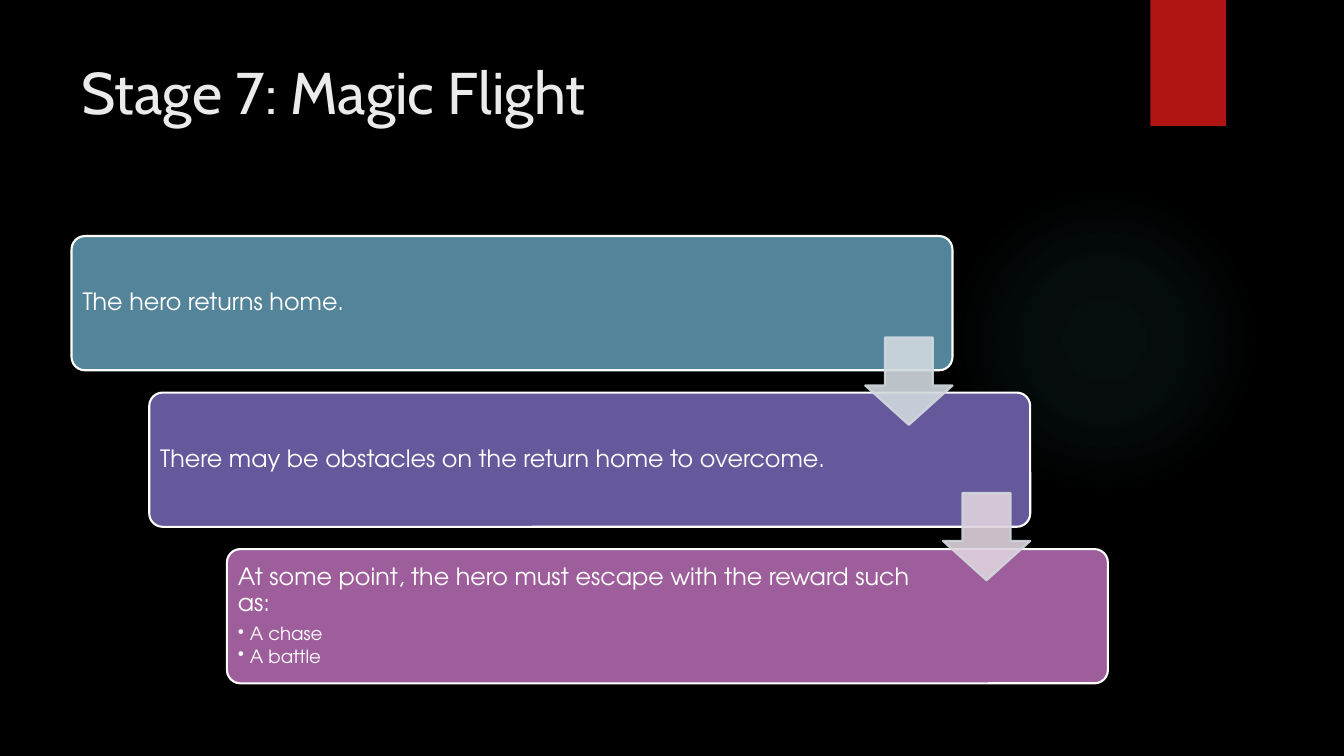
from lxml import etree
from pptx import Presentation
from pptx.dml.color import RGBColor
from pptx.enum.shapes import MSO_SHAPE as Geo
from pptx.enum.text import MSO_ANCHOR as Anchor
from pptx.oxml import parse_xml
from pptx.oxml.ns import nsdecls, qn
from pptx.util import Pt

# Content: fill, text width, lines as (text, is bullet)
TITLE = "Stage 7: Magic Flight"
TEAL = RGBColor(0x54, 0x84, 0x9A)
VIOLET = RGBColor(0x65, 0x59, 0x9C)
PLUM = RGBColor(0x9E, 0x5E, 0x9B)
STEPS = [
    (TEAL, 526.3, [("The hero returns home.", False)]),
    (VIOLET, 506.2,
     [("There may be obstacles on the return home to overcome.", False)]),
    (PLUM, 506.2,
     [("At some point, the hero must escape with the reward such as:", False),
      ("A chase", True), ("A battle", True)]),
]

# Colours and fonts
BLACK = RGBColor(0, 0, 0)
WHITE = RGBColor(255, 255, 255)
PALE = RGBColor(0xEB, 0xEB, 0xEB)
RED = RGBColor(0xB0, 0x15, 0x13)
GLOW = RGBColor(0x50, 0xB9, 0xC1)
MIST = RGBColor(0xD1, 0xD9, 0xDE)
ROSE = RGBColor(0xDF, 0xD2, 0xDE)
ARROWS = [MIST, ROSE]
HEAD, BODY = "Cabin", "TeX Gyre Adventor"

# Layout in points
LEFT, TOP, WIDE, HIGH = 51.1, 168.6, 629.3, 95.9
STEP_X, STEP_Y = 55.5, 111.8
PAD, INSET, ARROW = 2.8, 5.04, 62.4
ARROW_Y = 241.1

deck = Presentation()
deck.slide_width, deck.slide_height = Pt(960), Pt(540)
slide = deck.slides.add_slide(deck.slide_layouts[6])
slide.background.fill.solid()
slide.background.fill.fore_color.rgb = BLACK


def add_geo(kind, x, y, w, h, fill, line=None, adj=()):
    shape = slide.shapes.add_shape(kind, Pt(x), Pt(y), Pt(w), Pt(h))
    shape.shadow.inherit = False
    shape.fill.solid()
    shape.fill.fore_color.rgb = fill
    if line is None:
        shape.line.fill.background()
    else:
        shape.line.color.rgb = line
        shape.line.width = Pt(1.5)
    for i, value in enumerate(adj):
        shape.adjustments[i] = value
    return shape


def fade(shape, percent):
    for color in shape._element.spPr.iter(qn("a:srgbClr")):
        etree.SubElement(color, qn("a:alpha"), val=str(percent * 1000))


def add_bullet(para):
    props = para._p.get_or_add_pPr()
    props.set("marL", str(Pt(8.64)))
    props.set("indent", str(-Pt(8.64)))
    etree.SubElement(props, qn("a:buChar"), char="•")


def add_text(lines, x, y, w, h, *, font, color, size, small=13,
             inset=(7.2, 3.6), anchor=Anchor.TOP, space=None, after=0):
    frame = slide.shapes.add_textbox(Pt(x), Pt(y), Pt(w), Pt(h)).text_frame
    frame.word_wrap = True
    frame.vertical_anchor = anchor
    frame.margin_left = frame.margin_right = Pt(inset[0])
    frame.margin_top = frame.margin_bottom = Pt(inset[1])
    for i, (text, bullet) in enumerate(lines):
        para = frame.add_paragraph() if i else frame.paragraphs[0]
        if bullet:
            add_bullet(para)
        para.line_spacing = space
        para.space_after = Pt(2 if bullet else after)
        run = para.add_run()
        run.text = text
        run.font.name = font
        run.font.size = Pt(small if bullet else size)
        run.font.color.rgb = color


# Backdrop: soft glow and red tab
glow = add_geo(Geo.OVAL, 677.5, 131.8, 221.8, 221.8, GLOW)
stops = "".join(
    f'<a:gs pos="{pos * 1000}"><a:srgbClr val="{GLOW}">'
    f'<a:alpha val="{alpha * 1000}"/></a:srgbClr></a:gs>'
    for pos, alpha in [(0, 7), (36, 6), (69, 0), (100, 0)])
solid = glow._element.spPr.find(qn("a:solidFill"))
solid.getparent().replace(solid, parse_xml(
    f'<a:gradFill {nsdecls("a")}><a:gsLst>{stops}</a:gsLst>'
    '<a:path path="circle"><a:fillToRect l="50000" t="50000" '
    'r="50000" b="50000"/></a:path></a:gradFill>'))
add_geo(Geo.RECTANGLE, 821.8, 0, 54, 90, RED)

# Title
add_text([(TITLE, False)], 51.1, 36, 740.9, 110.2,
         font=HEAD, color=PALE, size=42)

# Staircase of steps
for i, (fill, width, lines) in enumerate(STEPS):
    x, y = LEFT + i * STEP_X, TOP + i * STEP_Y
    add_geo(Geo.ROUNDED_RECTANGLE, x, y, WIDE, HIGH, fill, WHITE, [0.1])
    add_text(lines, x + PAD, y + PAD, width, HIGH - 2 * PAD,
             font=BODY, color=WHITE, size=17, inset=(INSET, INSET),
             anchor=Anchor.MIDDLE, space=0.9, after=6)

# Arrows end flush with the right side of the step above
for i, fill in enumerate(ARROWS):
    x = LEFT + WIDE - ARROW + i * STEP_X
    arrow = add_geo(Geo.DOWN_ARROW, x, ARROW_Y + i * 111, ARROW, ARROW,
                    fill, MIST, [0.55, 0.45])
    fade(arrow, 90)

deck.save("out.pptx")
